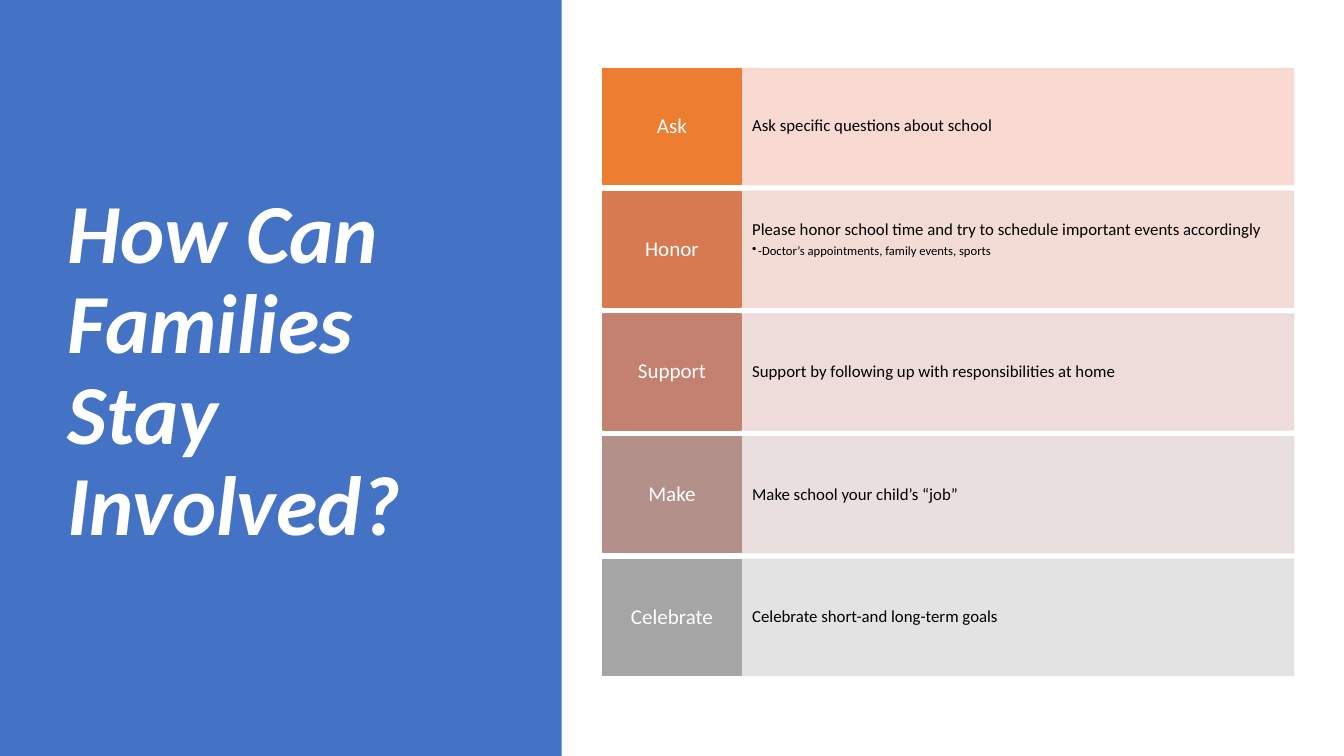
"""Build the slide on how families can stay involved."""
from dataclasses import dataclass

from lxml import etree
from pptx import Presentation
from pptx.dml.color import RGBColor
from pptx.enum.shapes import MSO_SHAPE
from pptx.enum.text import MSO_ANCHOR, MSO_AUTO_SIZE, PP_ALIGN
from pptx.oxml.ns import qn
from pptx.util import Inches, Pt

RECTANGLE = MSO_SHAPE.RECTANGLE
TOP, MIDDLE = MSO_ANCHOR.TOP, MSO_ANCHOR.MIDDLE
LEFT, CENTER = PP_ALIGN.LEFT, PP_ALIGN.CENTER
NO_FIT = MSO_AUTO_SIZE.NONE
TITLE_ONLY = 5


@dataclass(frozen=True)
class Theme:
    """Colours, type sizes and font of the deck."""
    font: str = "Calibri"
    panel: str = "4472C4"
    light: str = "FFFFFF"
    dark: str = "000000"
    title_size: int = 60
    label_size: int = 15
    text_size: int = 12
    detail_size: int = 9


@dataclass(frozen=True)
class Grid:
    """Share-based columns and evenly pitched rows of the slide."""
    width: float = 13.33
    height: float = 7.5
    top: float = 0.68
    pitch: float = 1.2175
    row_height: float = 1.15
    label_left: float = 5.98
    label_width: float = 1.37
    text_width: float = 5.48

    def row_top(self, row):
        """Return the top of a row."""
        return self.top + row * self.pitch


ROWS = [
    ("Ask", "ED7D31", "F8D7CE", "Ask specific questions about school", None),
    ("Honor", "D87A51", "F2D8D2",
     "Please honor school time and try to schedule important events accordingly",
     "-Doctor’s appointments, family events, sports"),
    ("Support", "C48170", "EDD9D7",
     "Support by following up with responsibilities at home", None),
    ("Make", "B4908B", "E7DCDC", "Make school your child’s “job”", None),
    ("Celebrate", "A5A5A5", "E1E1E1", "Celebrate short-and long-term goals", None),
]


def write_text(para, text, *, font, size, color, align=LEFT, bold=False,
               italic=False, after=0.0):
    """Write one formatted span, with space after as a share of its size."""
    para.alignment = align
    para.line_spacing = 0.9
    para.space_before = Pt(0)
    para.space_after = Pt(size * after)
    span = para.add_run()
    span.text = text
    span.font.name = font
    span.font.size = Pt(size)
    span.font.bold = bold
    span.font.italic = italic
    span.font.color.rgb = RGBColor.from_string(color)


def add_bullet(para, indent):
    """Give a paragraph a hanging round bullet."""
    properties = para._p.get_or_add_pPr()
    properties.set("marL", str(Inches(indent)))
    properties.set("indent", str(-Inches(indent)))
    etree.SubElement(properties, qn("a:buChar")).set("char", "•")


class SlideBuilder:
    """Holds the style and the current slide."""

    def __init__(self, page, theme, grid):
        """Keep the page, theme and grid."""
        self.page, self.theme, self.grid = page, theme, grid

    def block(self, left, top, width, height, color, *, outlined=True, alpha=None):
        """Add a flat rectangle, optionally outlined and translucent."""
        box = self.page.shapes.add_shape(
            RECTANGLE, Inches(left), Inches(top), Inches(width), Inches(height))
        box.shadow.inherit = False
        box.fill.solid()
        box.fill.fore_color.rgb = RGBColor.from_string(color)
        if outlined:
            box.line.color.rgb = RGBColor.from_string(color)
            box.line.width = Pt(1)
        else:
            box.line.fill.background()
        if alpha:
            for paint in box.element.spPr.iter(qn("a:srgbClr")):
                etree.SubElement(paint, qn("a:alpha")).set("val", str(alpha * 1000))
        return box

    def frame(self, box, side, edge, anchor=MIDDLE):
        """Set the margins and anchor of a box and return its text frame."""
        frame = box.text_frame
        frame.word_wrap = True
        frame.auto_size = NO_FIT
        frame.vertical_anchor = anchor
        frame.margin_left = frame.margin_right = Inches(side)
        frame.margin_top = frame.margin_bottom = Inches(edge)
        return frame

    def title(self, text):
        """Place the title over a full-height colour panel."""
        theme, grid = self.theme, self.grid
        panel = self.block(0, 0, 5.57, grid.height, theme.panel, outlined=False)
        title = self.page.shapes.title
        title.element.addprevious(panel.element)
        title.left, title.top = Inches(0.57), Inches(grid.top)
        title.width, title.height = Inches(4.16), Inches(6.02)
        frame = self.frame(title, 0.1, 0.05)
        write_text(frame.paragraphs[0], text, font=theme.font,
                   size=theme.title_size, color=theme.light, bold=True, italic=True)

    def row(self, number, label, strong, pale, text, detail):
        """Add a labelled row with its text and optional detail."""
        theme, grid = self.theme, self.grid
        top = grid.row_top(number)
        band = self.block(grid.label_left + grid.label_width, top,
                          grid.text_width, grid.row_height, pale, alpha=90)
        frame = self.frame(band, 0.11, 0.29, TOP if detail else MIDDLE)
        write_text(frame.paragraphs[0], text, font=theme.font,
                   size=theme.text_size, color=theme.dark, after=0.35)
        if detail:
            para = frame.add_paragraph()
            para.level = 1
            write_text(para, detail, font=theme.font, size=theme.detail_size,
                       color=theme.dark, after=0.15)
            add_bullet(para, 0.06)
        tag = self.block(grid.label_left, top, grid.label_width,
                         grid.row_height, strong)
        write_text(self.frame(tag, 0.07, 0.11).paragraphs[0], label,
                   font=theme.font, size=theme.label_size, color=theme.light,
                   align=CENTER, after=0.35)


def main():
    """Build and save the deck."""
    grid = Grid()
    deck = Presentation()
    deck.slide_width, deck.slide_height = Inches(grid.width), Inches(grid.height)
    page = deck.slides.add_slide(deck.slide_layouts[TITLE_ONLY])
    builder = SlideBuilder(page, Theme(), grid)
    builder.title("How Can Families Stay Involved?")
    for number, content in enumerate(ROWS):
        builder.row(number, *content)
    deck.save("out.pptx")


if __name__ == "__main__":
    main()
